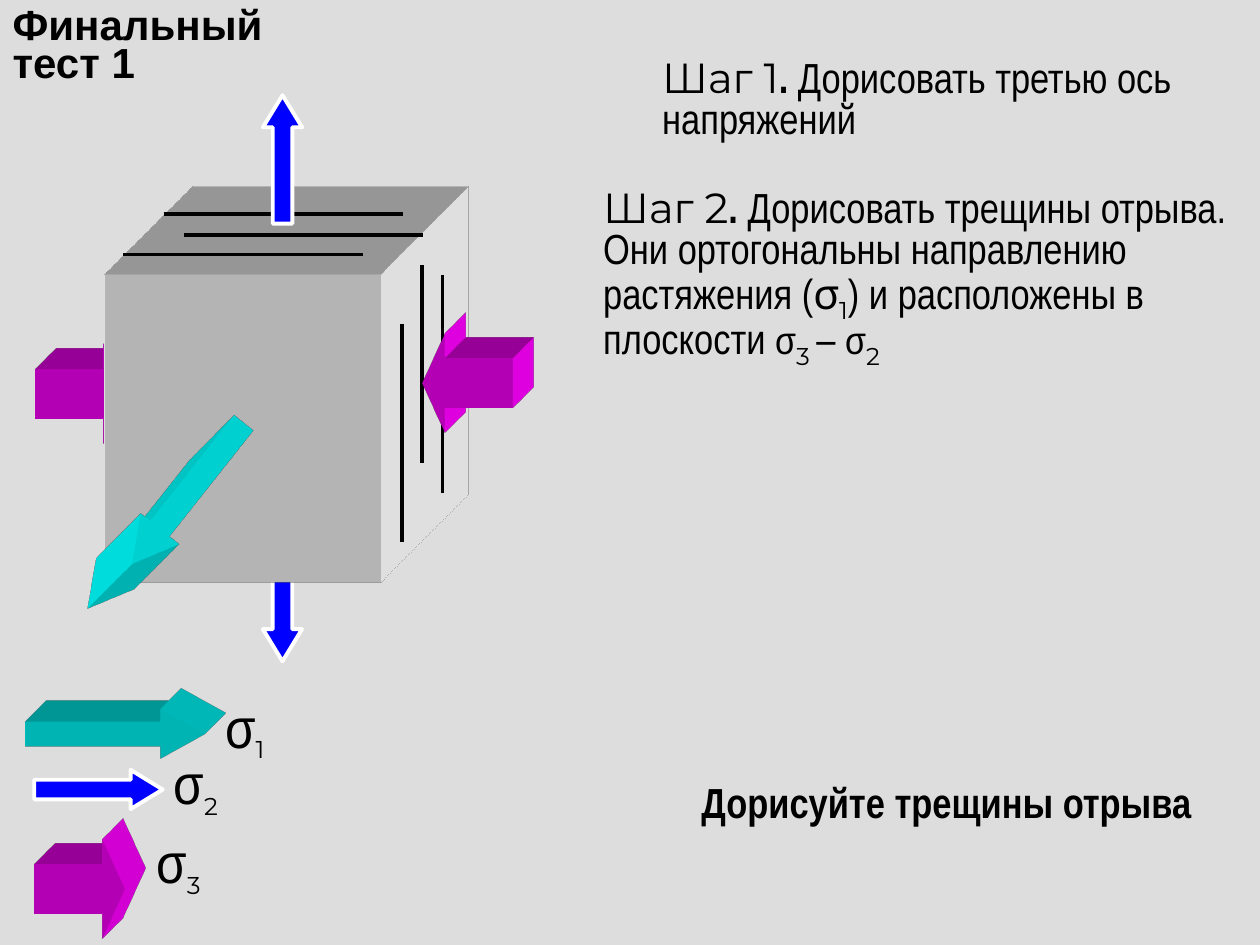
from lxml import etree
from pptx import Presentation
from pptx.dml.color import RGBColor
from pptx.enum.shapes import MSO_CONNECTOR, MSO_SHAPE
from pptx.enum.text import MSO_ANCHOR, MSO_AUTO_SIZE, PP_ALIGN
from pptx.oxml import parse_xml
from pptx.oxml.ns import qn
from pptx.util import Cm, Pt

RECTANGLE = MSO_SHAPE.RECTANGLE
RIGHT_ARROW = MSO_SHAPE.RIGHT_ARROW
LEFT_ARROW = MSO_SHAPE.LEFT_ARROW
STRAIGHT = MSO_CONNECTOR.STRAIGHT
MIDDLE = MSO_ANCHOR.MIDDLE
TOP = MSO_ANCHOR.TOP
LEFT = PP_ALIGN.LEFT
FIT_SHAPE = MSO_AUTO_SIZE.SHAPE_TO_FIT_TEXT
NO_FIT = MSO_AUTO_SIZE.NONE

COLORS = {
    "background": "DDDDDD",
    "ink": "000000",
    "white": "FFFFFF",
    "sigma1": "00FFFF",
    "sigma2": "0000FF",
    "sigma3": "FF00FF",
}
DRAWING = "http://schemas.openxmlformats.org/drawingml/2006/main"
SANS, NARROW, ROUND = "Arial", "Arial Narrow", "Montserrat"
SHALLOW, MEDIUM, DEEP = 1.19, 2.54, 5.02
THIN_ARROW = (2.59, 0.79)
SLIM_ARROW = (3.61, 0.99)
WIDE_ARROW = (1.83, 2)


def color(name):
    return RGBColor.from_string(COLORS[name])


def extrude(shape, name, depth, camera):
    scene = (
        f'<a:scene3d xmlns:a="{DRAWING}"><a:camera prst="{camera}"/>'
        '<a:lightRig rig="legacyFlat3" dir="b"/></a:scene3d>'
    )
    solid = (
        f'<a:sp3d xmlns:a="{DRAWING}" extrusionH="{Cm(depth)}" prstMaterial="legacyMatte">'
        f'<a:extrusionClr><a:srgbClr val="{COLORS[name]}"/></a:extrusionClr></a:sp3d>'
    )
    for part in (scene, solid):
        shape._element.spPr.append(parse_xml(part))


def add_solid(page, kind, left, top, size, name, depth,
              camera="legacyObliqueTopRight", adjustments=()):
    shape = page.shapes.add_shape(kind, Cm(left), Cm(top), *map(Cm, size))
    shape.shadow.inherit = False
    shape.fill.solid()
    shape.fill.fore_color.rgb = color(name)
    shape.line.fill.background()
    for index, value in enumerate(adjustments):
        shape.adjustments[index] = value
    extrude(shape, name, depth, camera)
    return shape


def add_slim_arrow(page, left, top, depth=SHALLOW, camera="legacyObliqueTopRight"):
    return add_solid(page, RIGHT_ARROW, left, top, SLIM_ARROW, "sigma1", depth, camera, (0.5, 0.91))


def add_wide_arrow(page, left, top):
    return add_solid(page, RIGHT_ARROW, left, top, WIDE_ARROW, "sigma3", SHALLOW,
                     adjustments=(0.5, 0.25))


def add_thin_arrow(page, left, top, rotation):
    arrow = page.shapes.add_shape(LEFT_ARROW, Cm(left), Cm(top), *map(Cm, THIN_ARROW))
    arrow.shadow.inherit = False
    arrow.fill.solid()
    arrow.fill.fore_color.rgb = color("sigma2")
    arrow.line.color.rgb = color("white")
    arrow.line.width = Pt(2.25)
    arrow.adjustments[0] = 0.5
    arrow.adjustments[1] = 0.82
    arrow.rotation = rotation
    return arrow


def add_crack(page, left, top, width, height):
    crack = page.shapes.add_connector(
        STRAIGHT, Cm(left), Cm(top), Cm(left + width), Cm(top + height))
    crack.line.color.rgb = color("ink")
    crack.line.width = Pt(2.25)
    etree.SubElement(crack._element.spPr, qn("a:effectLst"))


def fill_paragraph(para, spans, spacing):
    para.alignment = LEFT
    para.line_spacing = spacing
    para.space_before = Pt(0)
    for text, font, size, bold, baseline in spans:
        span = para.add_run()
        span.text = text
        span.font.name = font
        span.font.size = Pt(size)
        span.font.bold = bold
        span.font.color.rgb = color("ink")
        if baseline:
            span._r.get_or_add_rPr().set("baseline", str(baseline * 1000))


def add_text(page, left, top, width, height, spans, spacing=1.0, wrap=True):
    box = page.shapes.add_textbox(Cm(left), Cm(top), Cm(width), Cm(height))
    frame = box.text_frame
    frame.word_wrap = wrap
    frame.auto_size = FIT_SHAPE
    frame.vertical_anchor = TOP
    fill_paragraph(frame.paragraphs[0], spans, spacing)


def draw_title(page, left, top, width, height):
    title = page.shapes.title
    title.left, title.top, title.width, title.height = map(Cm, (left, top, width, height))
    frame = title.text_frame
    frame.word_wrap = True
    frame.auto_size = NO_FIT
    frame.vertical_anchor = MIDDLE
    fill_paragraph(frame.paragraphs[0], [("Финальный тест 1", SANS, 24, True, 0)], 0.75)


def draw_stress_block(page, left, top, width, height):
    add_thin_arrow(page, left + 2.29, top + 6.1, 270)
    add_wide_arrow(page, left - 1.4, top + 1.4)
    add_solid(page, RECTANGLE, left, top, (width, height), "white", DEEP)

    top_cracks = [(0.38, -0.41), (1.6, -0.81), (1.19, -1.22)]
    for across, down in top_cracks:
        add_crack(page, left + across, top + down, 4.82, 0)
    side_cracks = [(5.99, 0.99, 4.39), (6.81, 0, 4.39), (6.4, -0.2, 3.99)]
    for across, down, length in side_cracks:
        add_crack(page, left + across, top + down, 0, length)

    pressing = add_wide_arrow(page, left + 6.4, top + 1.19)
    pressing._element.spPr.find(qn("a:xfrm")).set("flipH", "1")
    add_thin_arrow(page, left + 2.29, top - 2.72, 90)
    pulling = add_slim_arrow(page, left - 0.13, top + 3.91, MEDIUM, "legacyObliqueBottomLeft")
    pulling.rotation = 128.5


def draw_legend(page, left, top):
    add_slim_arrow(page, left, top)
    add_thin_arrow(page, left + 0.18, top + 1.22, 180)
    add_wide_arrow(page, left + 0.18, top + 2.62)
    labels = [("1", 3.78, 0.08), ("2", 2.74, 1.22), ("3", 2.39, 2.82)]
    for number, across, down in labels:
        spans = [("σ", NARROW, 32, False, 0), (number, ROUND, 24, False, -25)]
        add_text(page, left + across, top + down, 1.83, 0.94, spans, 0.5)


def draw_steps(page, left, top):
    def heading(number):
        return [(f"Шаг {number}", ROUND, 24, False, 0), (". ", NARROW, 24, True, 0)]

    first = heading(1) + [("Дорисовать третью ось напряжений", NARROW, 24, False, 0)]
    second = heading(2) + [
        ("Дорисовать трещины отрыва. Они ортогональны направлению растяжения (",
         NARROW, 24, False, 0),
        ("σ", ROUND, 24, False, 0),
        ("1", ROUND, 24, False, -25),
        (") и расположены в плоскости ", NARROW, 24, False, 0),
        ("σ", NARROW, 22, False, 0),
        ("3 ", ROUND, 24, False, -25),
        ("– ", NARROW, 24, False, 0),
        ("σ", NARROW, 22, False, 0),
        ("2", ROUND, 24, False, -25),
    ]
    add_text(page, left + 1.19, top, 12.29, 1.88, first, 0.8)
    add_text(page, left, top + 2.62, 13.49, 3.51, second, 0.8)


def draw_prompt(page, left, top, width, height):
    spans = [("Дорисуйте трещины отрыва", NARROW, 24, True, 0)]
    add_text(page, left, top, width, height, spans, wrap=False)


def main():
    deck = Presentation()
    deck.slide_width, deck.slide_height = Cm(25.4), Cm(19.05)
    page = deck.slides.add_slide(deck.slide_layouts[5])
    page.background.fill.solid()
    page.background.fill.fore_color.rgb = color("background")
    draw_title(page, 0, 0, 5.89, 1.93)
    draw_stress_block(page, 2.11, 5.54, 5.56, 6.2)
    draw_legend(page, 0.51, 14.3)
    draw_steps(page, 11.91, 1.12)
    draw_prompt(page, 13.89, 15.52, 10.41, 1.27)
    deck.save("out.pptx")


if __name__ == "__main__":
    main()
